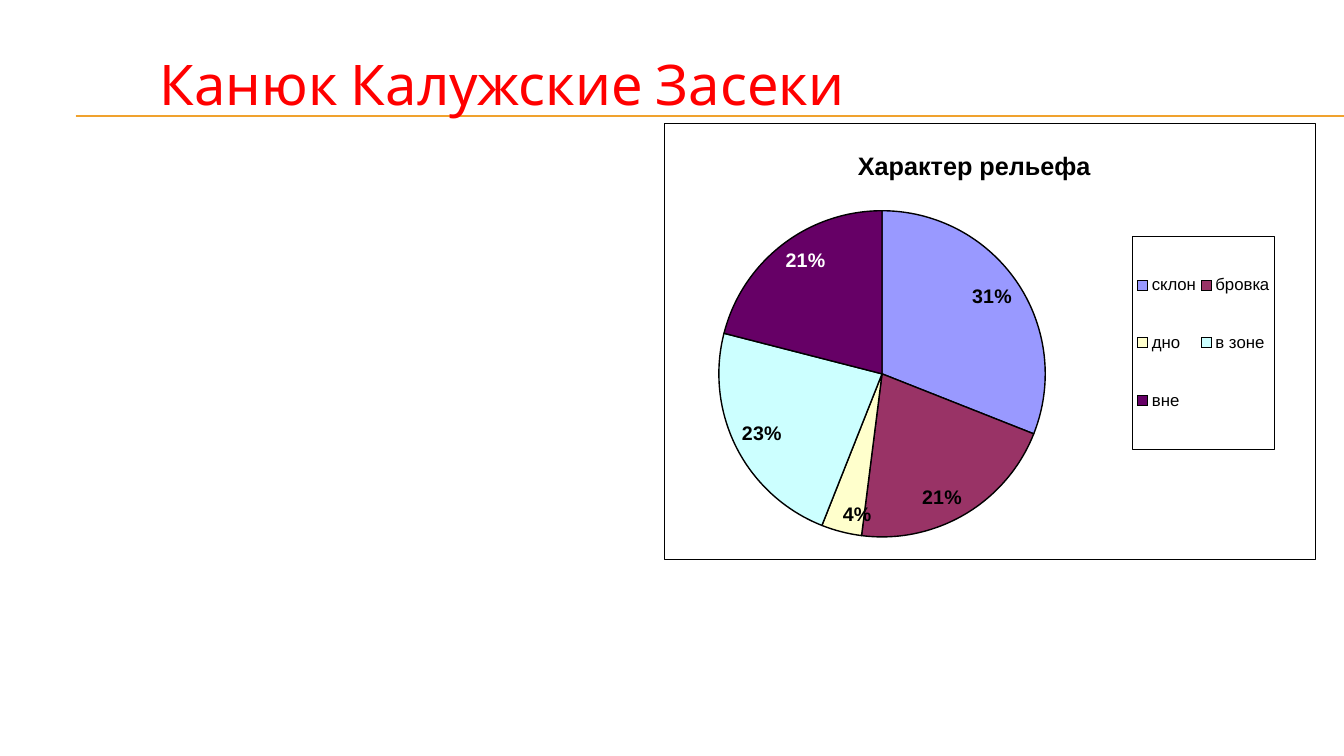
from lxml import etree
from pptx import Presentation
from pptx import util as u
from pptx.chart.data import CategoryChartData
from pptx.dml.color import RGBColor
from pptx.enum import chart as ch, shapes, text
from pptx.oxml import parse_xml
from pptx.oxml.ns import nsdecls, qn

COLORS = {"heading": "FF0000", "rule": "F0A22E", "ink": "000000", "paper": "FFFFFF"}
HEADING = "Канюк Калужские Засеки"
CHART_TITLE = "Характер рельефа"
RELIEF = [  # category, percent, slice colour
    ("склон", 31, "9999FF"),
    ("бровка", 21, "993366"),
    ("дно", 4, "FFFFCC"),
    ("в зоне", 23, "CCFFFF"),
    ("вне", 21, "660066"),
]
RULE_YS = (1.15, 1.16)
RULE_X = (0.75, 13.33)
HEADING_BOX = (0.29, 0.44, 9.38, 0.77)
CHART_BOX = (6.59, 1.22, 6.46, 4.33)
# fractions of the chart: x, y and, where sized, width and height
TITLE_AT = (0.29, 0.05)
PLOT_AT = (0.083, 0.201, 0.502, 0.748)
LEGEND_AT = (0.719, 0.26, 0.218, 0.488)


def inches(values):
    return [u.Inches(v) for v in values]


def set_font(font, color, **attrs):
    for name, value in attrs.items():
        setattr(font, name, value)
    font.color.rgb = RGBColor.from_string(COLORS[color])


def set_layout(parent, index, fractions, inner=False):
    """Place a chart part at fixed fractions of the chart area."""
    for old in parent.findall(qn("c:layout")):
        parent.remove(old)
    layout = parse_xml(f"<c:layout {nsdecls('c')}><c:manualLayout/></c:layout>")
    values = [("layoutTarget", "inner")] if inner else []
    values += [("xMode", "edge"), ("yMode", "edge")]
    values += zip("xywh", fractions)
    for tag, value in values:
        etree.SubElement(layout[0], qn(f"c:{tag}")).set("val", str(value))
    parent.insert(index, layout)


def boxed(border_pt):
    """Shape properties with a paper fill and an ink border."""
    return parse_xml(
        f"<c:spPr {nsdecls('c', 'a')}>"
        f'<a:solidFill><a:srgbClr val="{COLORS["paper"]}"/></a:solidFill>'
        f'<a:ln w="{u.Pt(border_pt)}"><a:solidFill><a:srgbClr val="{COLORS["ink"]}"/>'
        "</a:solidFill></a:ln></c:spPr>")


def add_rules(s):
    for y in RULE_YS:
        line = s.shapes.add_connector(
            shapes.MSO_CONNECTOR.STRAIGHT, *inches((RULE_X[0], y, RULE_X[1], y)))
        line.line.color.rgb = RGBColor.from_string(COLORS["rule"])
        line.line.width = u.Pt(0.75)
        etree.SubElement(line._element.spPr, qn("a:effectLst"))


def add_heading(s):
    tf = s.shapes.add_textbox(*inches(HEADING_BOX)).text_frame
    tf.word_wrap = True
    p = tf.paragraphs[0]
    p.alignment = text.PP_ALIGN.CENTER
    r = p.add_run()
    r.text = HEADING
    set_font(r.font, "heading", name="Karla", size=u.Pt(40))


def add_labels(series):
    labels = series.data_labels
    for name, value in {"show_percentage": True, "show_value": False,
                        "number_format": "0%", "number_format_is_linked": False,
                        "position": ch.XL_LABEL_POSITION.INSIDE_END}.items():
        setattr(labels, name, value)
    label_font = {"name": "Arial", "size": u.Pt(14), "bold": True}
    set_font(labels.font, "ink", **label_font)

    last = len(RELIEF) - 1
    label = series.points[last].data_label
    set_font(label.font, "paper", **label_font)
    label.position = ch.XL_LABEL_POSITION.INSIDE_END
    dLbl = labels._element.find(qn("c:dLbl"))
    dLbl.find(qn("c:showVal")).set("val", "0")
    dLbl.find(qn("c:showPercent")).set("val", "1")
    dLbl.insert(1, parse_xml(
        f'<c:numFmt {nsdecls("c")} formatCode="0%" sourceLinked="0"/>'))


def add_relief_chart(s):
    data = CategoryChartData()
    data.categories = [name for name, _, _ in RELIEF]
    data.add_series("Series 1", [value for _, value, _ in RELIEF])
    chart = s.shapes.add_chart(
        ch.XL_CHART_TYPE.PIE, *inches(CHART_BOX), data).chart
    set_font(chart.font, "ink", name="Arial", size=u.Pt(10))
    chart._chartSpace.find(qn("c:chart")).addnext(boxed(0.25))

    chart.has_title = True
    tf = chart.chart_title.text_frame
    tf.text = CHART_TITLE
    set_font(tf.paragraphs[0].runs[0].font, "ink",
             name="Arial", size=u.Pt(18), bold=True)
    set_layout(chart.chart_title._element, 1, TITLE_AT)

    chart.has_legend = True
    legend = chart.legend
    legend.position = ch.XL_LEGEND_POSITION.RIGHT
    legend.include_in_layout = False
    set_font(legend.font, "ink", name="Arial", size=u.Pt(12))
    set_layout(legend._element, 1, LEGEND_AT)
    legend._element.find(qn("c:txPr")).addprevious(boxed(0.25))

    plot = chart.plots[0]
    plot.vary_by_categories = True
    set_layout(plot._element.getparent(), 0, PLOT_AT, inner=True)
    series = plot.series[0]
    for i, (_, _, color) in enumerate(RELIEF):
        fmt = series.points[i].format
        fmt.fill.solid()
        fmt.fill.fore_color.rgb = RGBColor.from_string(color)
        fmt.line.color.rgb = RGBColor.from_string(COLORS["ink"])
        fmt.line.width = u.Pt(1)
    add_labels(series)


def main():
    prs = Presentation()
    prs.slide_width, prs.slide_height = inches((13.33, 7.5))
    s = prs.slides.add_slide(prs.slide_layouts[6])
    add_rules(s)
    add_heading(s)
    add_relief_chart(s)
    prs.save("out.pptx")


if __name__ == "__main__":
    main()
